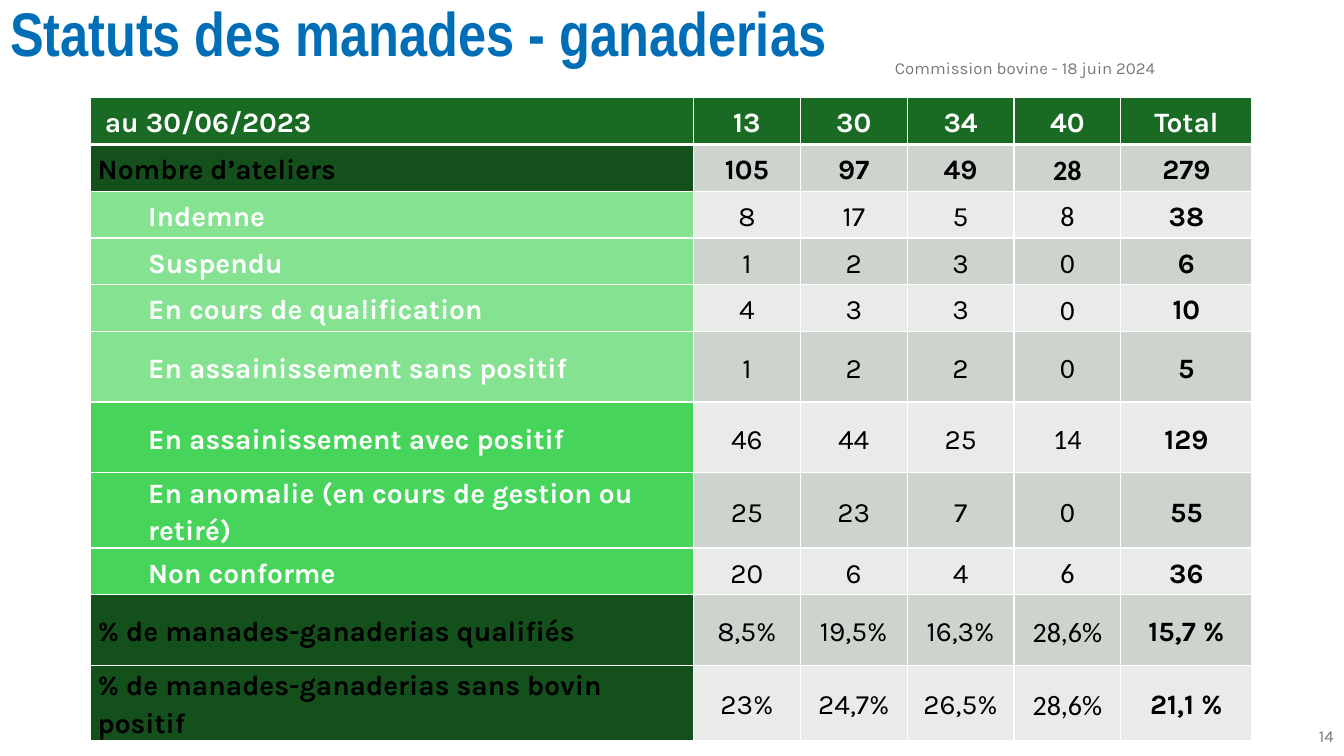
from typing import NamedTuple

from lxml.etree import SubElement
from pptx import Presentation
from pptx.dml.color import RGBColor
from pptx.enum.text import MSO_ANCHOR, MSO_AUTO_SIZE, PP_ALIGN
from pptx.oxml.ns import qn
from pptx.util import Inches, Length, Pt

# Grid: one column or row is a tenth of an inch
GRID_STEP = 0.1
SLIDE_COLUMNS, SLIDE_ROWS = 133.33, 75

WHITE, BLACK, GREY, BLUE = "FFFFFF", "000000", "797979", "006EB6"
HEADER_GREEN, DARK_GREEN = "196B24", "13501B"
PALE_GREEN, BRIGHT_GREEN = "84E291", "47D45A"
BANDS = ("CCD4CD", "E8EBE8")
MAIN_FONT = "Karla"
LANDES_COLUMN, TOTAL_COLUMN = 4, 5
COLUMN_WIDTHS = (59.8, 10.6, 10.6, 10.6, 10.6, 13)
ROW_SHORT, ROW_TALL, ROW_WRAPPED = 4.64, 7, 7.47


class Area(NamedTuple):
    column: float
    row: float
    columns: float
    rows: float


class StatusRow(NamedTuple):
    values: tuple[str, ...]
    label_fill: str
    height: float = ROW_SHORT
    bold: bool = False
    indented: bool = True


class Caption(NamedTuple):
    text: str
    area: Area
    alignment: PP_ALIGN


TITLE_AREA = Area(0, -0.2, 129.1, 7.6)
TABLE_AREA = Area(9, 9.7, 115.2, 64.1)

STATUS_ROWS = (
    StatusRow((" au 30/06/2023", "13", "30", "34", "40", "Total"),
              HEADER_GREEN, bold=True, indented=False),
    StatusRow(("Nombre d’ateliers", "105", "97", "49", "28", "279"),
              DARK_GREEN, bold=True, indented=False),
    StatusRow(("Indemne", "8", "17", "5", "8", "38"), PALE_GREEN),
    StatusRow(("Suspendu", "1", "2", "3", "0", "6"), PALE_GREEN),
    StatusRow(("En cours de qualification", "4", "3", "3", "0", "10"), PALE_GREEN),
    StatusRow(("En assainissement sans positif", "1", "2", "2", "0", "5"),
              PALE_GREEN, ROW_TALL),
    StatusRow(("En assainissement avec positif", "46", "44", "25", "14", "129"),
              BRIGHT_GREEN, ROW_TALL),
    StatusRow(("En anomalie (en cours de gestion ou retiré)", "25", "23", "7", "0", "55"),
              BRIGHT_GREEN, ROW_WRAPPED),
    StatusRow(("Non conforme", "20", "6", "4", "6", "36"), BRIGHT_GREEN),
    StatusRow(("% de manades-ganaderias qualifiés",
               "8,5%", "19,5%", "16,3%", "28,6%", "15,7 %"),
              DARK_GREEN, ROW_TALL, indented=False),
    StatusRow(("% de manades-ganaderias sans bovin positif",
               "23%", "24,7%", "26,5%", "28,6%", "21,1 %"),
              DARK_GREEN, ROW_WRAPPED, indented=False),
)

CAPTIONS = (
    Caption("Commission bovine - 18 juin 2024", Area(79.2, 4.7, 45, 4), PP_ALIGN.CENTER),
    Caption("14", Area(103.3, 71, 30, 4), PP_ALIGN.RIGHT),
)


def grid(steps: float) -> Length:
    return Inches(steps * GRID_STEP)


def place(area: Area) -> tuple[Length, ...]:
    return tuple(grid(steps) for steps in area)


def color(value: str) -> RGBColor:
    return RGBColor.from_string(value)


def format_font(paragraph, size: float, name: str, text_color: str,
                bold: bool = False) -> None:
    font = paragraph.font
    font.size, font.name, font.bold = Pt(size), name, bold
    font.color.rgb = color(text_color)


def draw_borders(cell, top: float, bottom: float) -> None:
    properties = cell._tc.get_or_add_tcPr()
    for side, width in (("L", 1), ("R", 1), ("T", top), ("B", bottom)):
        line = SubElement(properties, qn(f"a:ln{side}"), w=str(Pt(width)))
        fill = SubElement(line, qn("a:solidFill"))
        SubElement(fill, qn("a:srgbClr"), val=WHITE)


def fill_cell(cell, status: StatusRow, row: int, column: int) -> None:
    is_header, is_label = row == 0, column == 0
    draw_borders(cell, top=3 if row == 1 else 1, bottom=3 if is_header else 1)
    cell.fill.solid()
    cell.fill.fore_color.rgb = color(
        status.label_fill if is_header or is_label else BANDS[(row - 1) % 2])
    cell.vertical_anchor = MSO_ANCHOR.MIDDLE
    cell.margin_left = cell.margin_right = Inches(0.07)
    cell.margin_top = cell.margin_bottom = 0

    cell.text = status.values[column]
    paragraph = cell.text_frame.paragraphs[0]
    paragraph.line_spacing = 1.15
    paragraph.alignment = PP_ALIGN.LEFT if is_label else PP_ALIGN.CENTER
    if is_label and status.indented:
        paragraph.level = 1
        indent = paragraph._p.get_or_add_pPr()
        indent.set("marL", str(grid(5)))
        indent.set("indent", "0")
    white_text = is_header or (is_label and status.indented)
    name = "Calibri" if column == LANDES_COLUMN and not is_header else MAIN_FONT
    format_font(paragraph, 20, name, WHITE if white_text else BLACK,
                status.bold or column in (0, TOTAL_COLUMN))


def add_status_table(slide) -> None:
    table = slide.shapes.add_table(
        len(STATUS_ROWS), len(COLUMN_WIDTHS), *place(TABLE_AREA)).table
    table.horz_banding = False
    for column, width in zip(table.columns, COLUMN_WIDTHS):
        column.width = grid(width)
    for row, status in enumerate(STATUS_ROWS):
        table.rows[row].height = grid(status.height)
        for column in range(len(COLUMN_WIDTHS)):
            fill_cell(table.cell(row, column), status, row, column)


def add_title(slide) -> None:
    title = slide.shapes.title
    title.left, title.top, title.width, title.height = place(TITLE_AREA)
    frame = title.text_frame
    frame.text = "Statuts des manades - ganaderias"
    frame.auto_size = MSO_AUTO_SIZE.NONE
    frame.vertical_anchor = MSO_ANCHOR.MIDDLE
    paragraph = frame.paragraphs[0]
    paragraph.alignment = PP_ALIGN.LEFT
    paragraph.line_spacing = 0.9
    format_font(paragraph, 44, "Arial Narrow", BLUE, bold=True)


def add_caption(slide, caption: Caption) -> None:
    frame = slide.shapes.add_textbox(*place(caption.area)).text_frame
    frame.word_wrap = True
    frame.vertical_anchor = MSO_ANCHOR.MIDDLE
    frame.text = caption.text
    paragraph = frame.paragraphs[0]
    paragraph.alignment = caption.alignment
    format_font(paragraph, 12, MAIN_FONT, GREY)


def main() -> None:
    presentation = Presentation()
    presentation.slide_width = grid(SLIDE_COLUMNS)
    presentation.slide_height = grid(SLIDE_ROWS)
    slide = presentation.slides.add_slide(presentation.slide_layouts[5])

    # Title, table, then date and page number
    add_title(slide)
    add_status_table(slide)
    for caption in CAPTIONS:
        add_caption(slide, caption)
    presentation.save("out.pptx")


if __name__ == "__main__":
    main()
